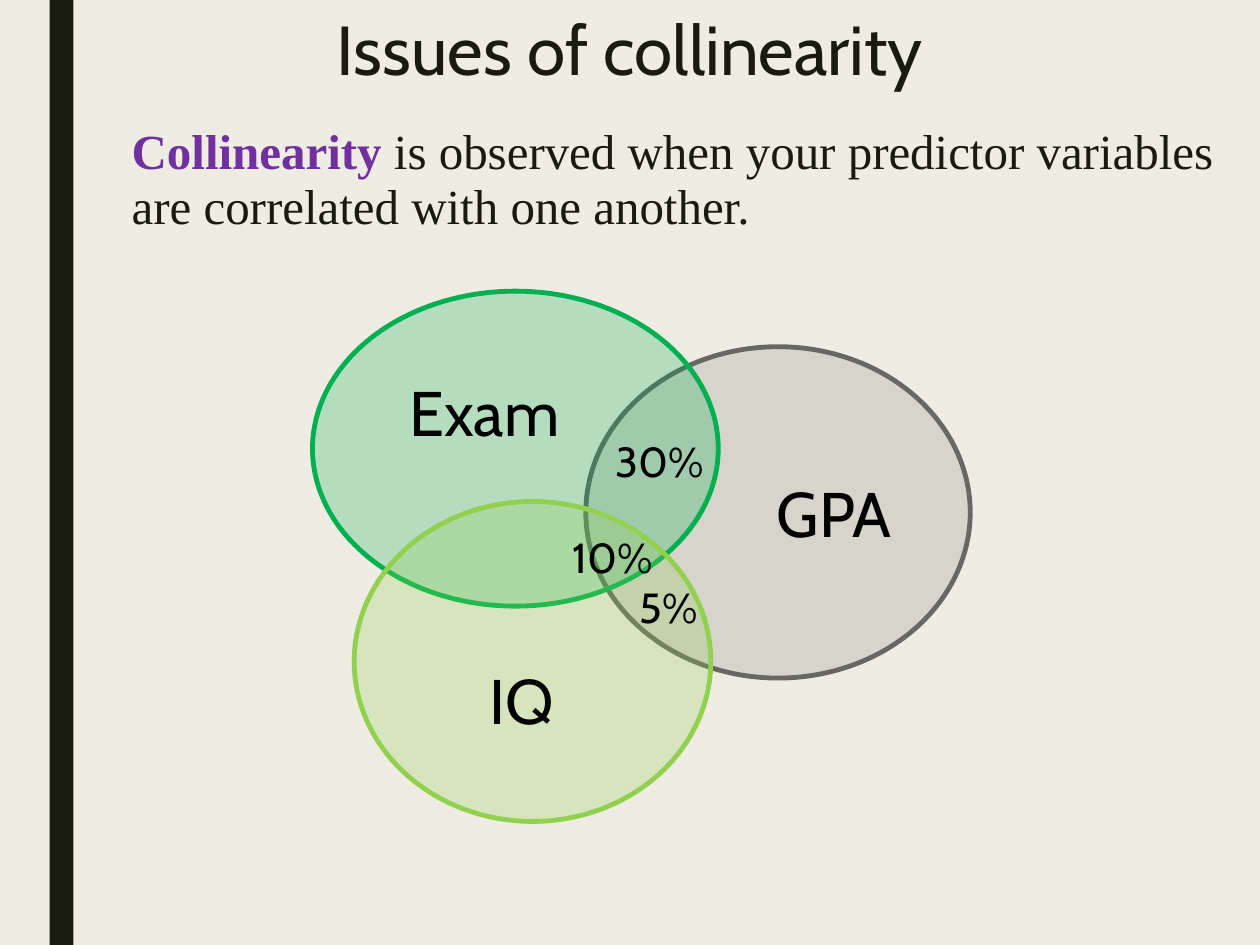
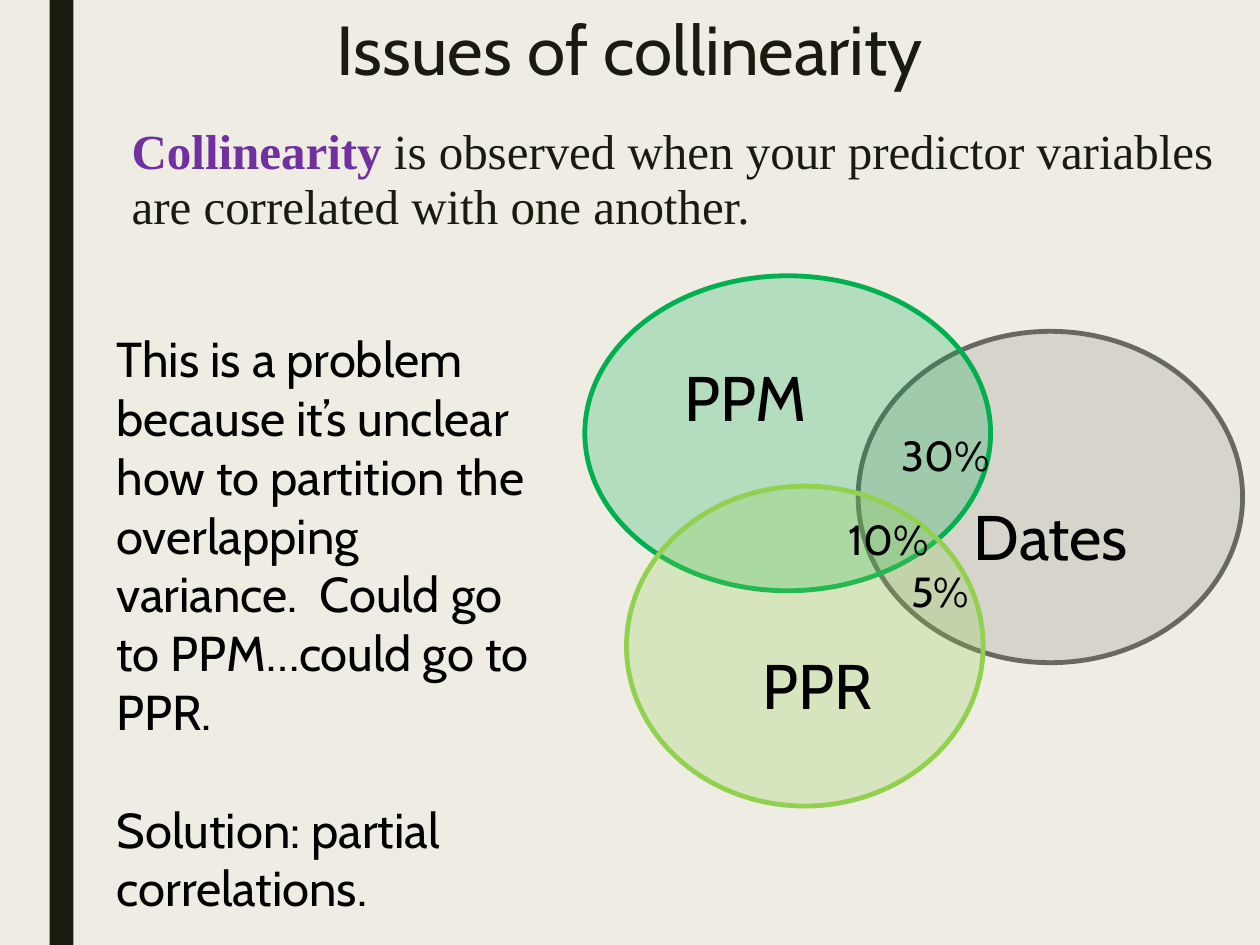
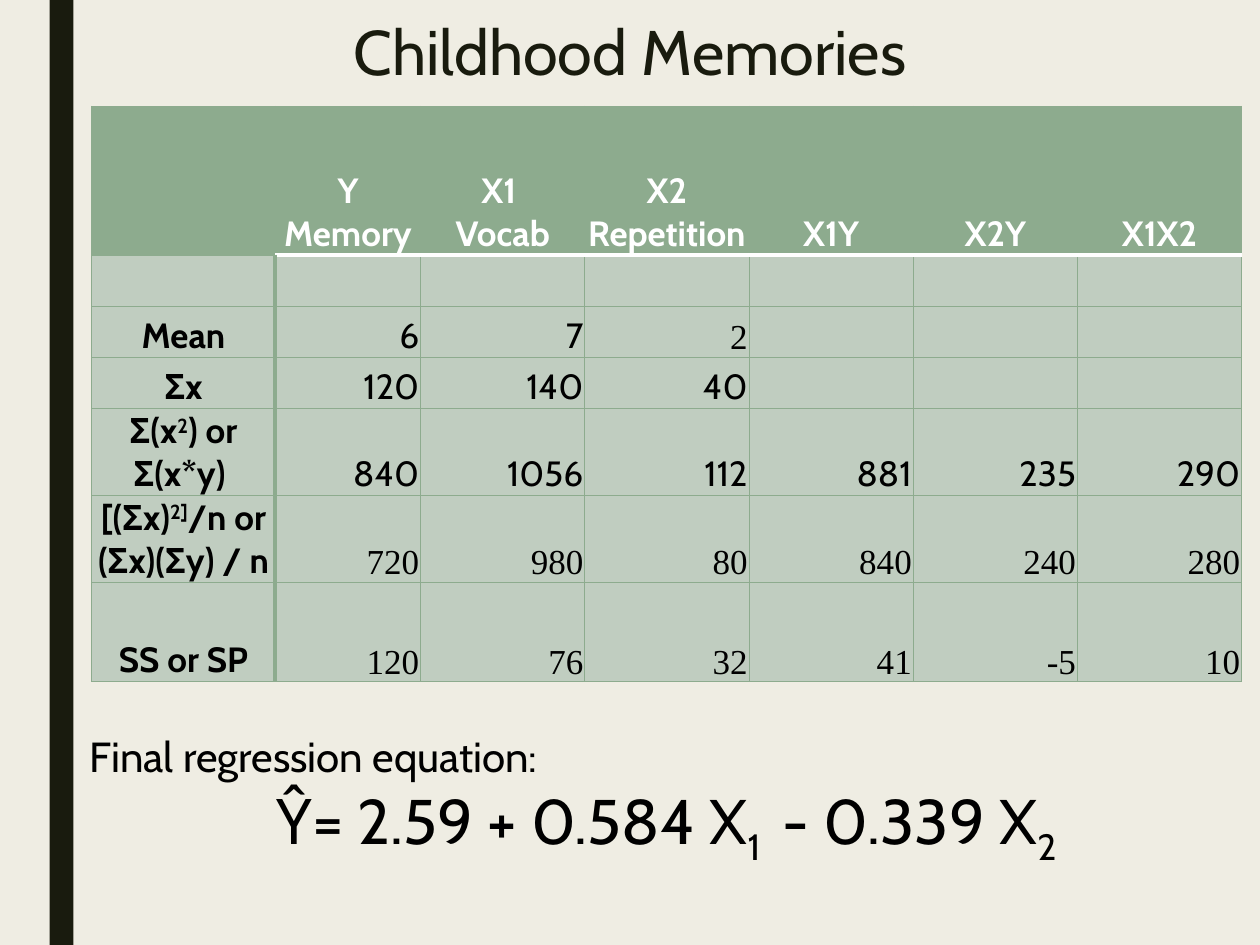
"""Builds three slides on collinearity and a two-predictor regression."""
from dataclasses import dataclass

from pptx import Presentation
from pptx.dml.color import RGBColor
from pptx.enum.shapes import MSO_SHAPE
from pptx.enum.text import MSO_ANCHOR as Anchor, MSO_AUTO_SIZE as AutoSize, PP_ALIGN as Align
from pptx.oxml.ns import qn
from pptx.oxml.xmlchemy import OxmlElement
from pptx.util import Cm, Pt


@dataclass(frozen=True)
class Theme:
    sans: str = "Cabin"
    serif: str = "Times New Roman"
    paper: str = "EFEDE3"
    ink: str = "191B0E"
    black: str = "000000"
    white: str = "FFFFFF"
    term: str = "7030A0"
    header: str = "8DAB8E"
    cell: str = "C0CDC0"
    title: float = 39.6
    large: int = 36
    body: int = 28
    small: int = 24
    table: int = 20


THEME = Theme()

COLLINEARITY = "Issues of collinearity"
DEFINITION = ("Collinearity",
              " is observed when your predictor variables are correlated with one another.")
PROBLEM = ("This is a problem because it’s unclear how to partition the overlapping "
           "variance.  Could go to PPM…could go to PPR.",
           "Solution: partial correlations.")

CIRCLES = [
    {"box": (5.51, 1.12, 7.75, 6.68), "fill": "8C8D86", "line": "686863"},
    {"box": (0, 0, 8.18, 6.35), "fill": "00B050", "line": "00B050"},
    {"box": (0.84, 4.24, 7.19, 6.45), "fill": "92D050", "line": "92D050"},
]
EXAM_VENN = {
    "origin": (6.3, 5.87),
    "labels": [("GPA", 3.85, 0), ("Exam", 1.95, -0.76), ("IQ", 2.73, 0.76)],
    "shares": [("30%", 5.86, 2.79), ("10%", 5, 4.72), ("5%", 6.35, 5.72)],
}
PPM_VENN = {
    "origin": (11.79, 5.56),
    "labels": [("Dates", 2.33, 0.78), ("PPM", 2, -0.74), ("PPR", 2.73, 0.78)],
    "shares": [("30%", 6.13, 2.97), ("10%", 5.06, 4.67), ("5%", 6.33, 5.72)],
}

MEMORIES = "Childhood Memories"
HEADINGS = ["", "Y Memory", "X1 \nVocab", "X2 Repetition", "X1Y", "X2Y", "X1X2"]
STATISTICS = [
    ([], []),
    ([[("Mean", 0)]], ["6", "7", "2"]),
    ([[("Σx", 0)]], ["120", "140", "40"]),
    ([[("Σ(x", 0), ("2", 30), (") or Σ(x*y) ", 0)]],
     ["840", "1056", "112", "881", "235", "290"]),
    ([[("[(Σx)", 0), ("2]", 30), ("/n or", 0)], [("(Σx)(Σy) / n", 0)]],
     ["720", "980", "80", "840", "240", "280"]),
    ([[("SS or SP", 0)]], ["120", "76", "32", "41", "-5", "10"]),
]
SERIF_ROWS, SERIF_CELLS = {5, 6}, {(2, 3)}
COLUMN_WIDTHS = [3.7, 2.93] + [3.31] * 5
ROW_HEIGHTS = [3, 1.03, 1.03, 1.03, 1.75, 1.75, 2.01]
EQUATION_LEAD = "Final regression equation:"
EQUATION = [("Ŷ= 2.59 + 0.584 X", 0), ("1 ", -25), (" - 0.339 X", 0), ("2", -25)]


def place(shape, *box):
    shape.left, shape.top, shape.width, shape.height = (Cm(v) for v in box)
    return shape


def style(paragraph, size, color=THEME.black, face=THEME.sans, bold=False, align=None):
    font = paragraph.font
    font.name, font.size, font.bold = face, Pt(size), bold
    font.color.rgb = RGBColor.from_string(color)
    paragraph.alignment = align


def write(frame, paragraphs, size, **look):
    """Writes paragraphs made of (text, baseline percent) runs."""
    for index, parts in enumerate(paragraphs):
        paragraph = frame.add_paragraph() if index else frame.paragraphs[0]
        for text, baseline in parts:
            run = paragraph.add_run()
            run.text = text
            if baseline:
                run._r.get_or_add_rPr().set("baseline", str(baseline * 1000))
        style(paragraph, size, **look)


def add_text(slide, box, paragraphs, size):
    frame = slide.shapes.add_textbox(*(Cm(v) for v in box)).text_frame
    frame.word_wrap = True
    write(frame, paragraphs, size)
    return frame


def paint(shape, color):
    shape.shadow.inherit = False
    shape.fill.solid()
    shape.fill.fore_color.rgb = RGBColor.from_string(color)


def set_up_master(deck, slide):
    """Gives the master its background and the dark band at the left."""
    master = deck.slide_master
    master.background.fill.solid()
    master.background.fill.fore_color.rgb = RGBColor.from_string(THEME.paper)
    band = place(slide.shapes.add_shape(MSO_SHAPE.RECTANGLE, 0, 0, 0, 0), 1, 0, 0.48, 19.05)
    paint(band, THEME.ink)
    band.line.fill.background()
    master.shapes.element.insert(2, band.element)


def add_title(slide, text, size, *box):
    frame = place(slide.shapes.title, *box).text_frame
    frame.text = text
    frame.vertical_anchor, frame.auto_size = Anchor.TOP, AutoSize.NONE
    style(frame.paragraphs[0], size, THEME.ink, align=Align.CENTER)
    frame.paragraphs[0].line_spacing = 0.89


def add_definition(slide):
    frame = place(slide.placeholders[1], 2.4, 2.39, 22.86, 3.18).text_frame
    frame.auto_size = AutoSize.NONE
    paragraph = frame.paragraphs[0]
    write(frame, [[(part, 0) for part in DEFINITION]], THEME.body,
          color=THEME.ink, face=THEME.serif, align=Align.LEFT)
    term = paragraph.runs[0].font
    term.bold, term.color.rgb = True, RGBColor.from_string(THEME.term)
    paragraph.line_spacing = 0.94
    paragraph.space_before, paragraph.space_after = Pt(10), Pt(2)
    properties = paragraph._p.get_or_add_pPr()
    properties.set("marL", "0")
    properties.set("indent", "0")
    properties.insert_element_before(OxmlElement("a:buNone"), "a:tabLst", "a:defRPr", "a:extLst")


def add_circle(slide, origin, circle, label):
    x, y, width, height = circle["box"]
    text, label_left, drop = label
    oval = slide.shapes.add_shape(MSO_SHAPE.OVAL, 0, 0, 0, 0)
    place(oval, origin[0] + x, origin[1] + y, width, height)
    paint(oval, circle["fill"])
    alpha = OxmlElement("a:alpha")
    alpha.set("val", "25000")
    oval.element.spPr.find(qn("a:solidFill"))[0].append(alpha)
    oval.line.color.rgb = RGBColor.from_string(circle["line"])
    oval.line.width = Pt(2.75)
    frame = oval.text_frame
    frame.vertical_anchor = Anchor.MIDDLE
    frame.margin_left, frame.margin_right = Cm(label_left - 0.146 * width), 0
    frame.margin_top, frame.margin_bottom = Cm(max(2 * drop, 0)), Cm(max(-2 * drop, 0))
    write(frame, [[(text, 0)]], THEME.large, align=Align.LEFT)


def add_venn(slide, venn):
    left, top = venn["origin"]
    for circle, label in zip(CIRCLES, venn["labels"]):
        add_circle(slide, venn["origin"], circle, label)
    for share, x, y in venn["shares"]:
        add_text(slide, (left + x, top + y, 2.7, 1.27), [[(share, 0)]], THEME.small)


def add_borders(cell, row, column):
    thin, thick, rule = (THEME.header, 0.5), (THEME.header, 2.75), (THEME.white, 2.75)
    edges = {
        "L": thick if row and column == 1 else thin,
        "R": thick if row and column == 0 else thin,
        "T": rule if row == 1 and column else thin,
        "B": rule if row == 0 and column else thin,
    }
    for side, (color, width) in edges.items():
        line = OxmlElement(f"a:ln{side}")
        line.set("w", str(Pt(width)))
        fill, shade = OxmlElement("a:solidFill"), OxmlElement("a:srgbClr")
        shade.set("val", color)
        fill.append(shade)
        line.append(fill)
        cell._tc.get_or_add_tcPr().append(line)


def add_statistics(slide):
    grid = [[[[(line, 0)] for line in heading.split("\n")] for heading in HEADINGS]]
    for label, values in STATISTICS:
        padded = values + [""] * (len(HEADINGS) - 1 - len(values))
        grid.append([label or [[]]] + [[[(value, 0)]] for value in padded])
    table = slide.shapes.add_table(
        len(grid), len(HEADINGS), Cm(1.85), Cm(2.14),
        Cm(sum(COLUMN_WIDTHS)), Cm(sum(ROW_HEIGHTS))).table
    table.horz_banding = False
    for column, width in zip(table.columns, COLUMN_WIDTHS):
        column.width = Cm(width)
    for r, (cells, height) in enumerate(zip(grid, ROW_HEIGHTS)):
        table.rows[r].height = Cm(height)
        for c, paragraphs in enumerate(cells):
            cell = table.cell(r, c)
            heading, labelled = r == 0, r == 0 or c == 0
            serif = not labelled and (r in SERIF_ROWS or (r, c) in SERIF_CELLS)
            add_borders(cell, r, c)
            cell.fill.solid()
            cell.fill.fore_color.rgb = RGBColor.from_string(
                THEME.header if heading else THEME.cell)
            cell.margin_left = cell.margin_right = cell.margin_top = Cm(0.03)
            cell.margin_bottom = 0
            cell.vertical_anchor = Anchor.BOTTOM
            write(cell.text_frame, paragraphs, THEME.table,
                  color=THEME.white if heading else THEME.black,
                  face=THEME.serif if serif else THEME.sans, bold=labelled,
                  align=Align.CENTER if labelled else Align.RIGHT)


def add_equation(slide):
    frame = add_text(slide, (1.56, 14.61, 23.75, 3.45),
                     [[(EQUATION_LEAD, 0)], EQUATION], THEME.small)
    style(frame.paragraphs[1], THEME.large, align=Align.CENTER)


def main():
    deck = Presentation()
    deck.slide_width, deck.slide_height = Cm(25.4), Cm(19.05)
    content, title_only = deck.slide_layouts[1], deck.slide_layouts[5]

    for venn in (EXAM_VENN, PPM_VENN):
        slide = deck.slides.add_slide(content)
        add_title(slide, COLLINEARITY, THEME.title, 6.3, 0.2, 12.8, 4.11)
        add_definition(slide)
        add_venn(slide, venn)
    problem = add_text(slide, (2.1, 6.5, 9.12, 12.22),
                       [[(text, 0)] for text in PROBLEM], THEME.body)
    problem.paragraphs[1].space_before = Pt(33.5)
    set_up_master(deck, slide)

    slide = deck.slides.add_slide(title_only)
    add_title(slide, MEMORIES, THEME.large, 6.56, 0.3, 12.27, 3.18)
    add_statistics(slide)
    add_equation(slide)
    deck.save("out.pptx")


if __name__ == "__main__":
    main()
